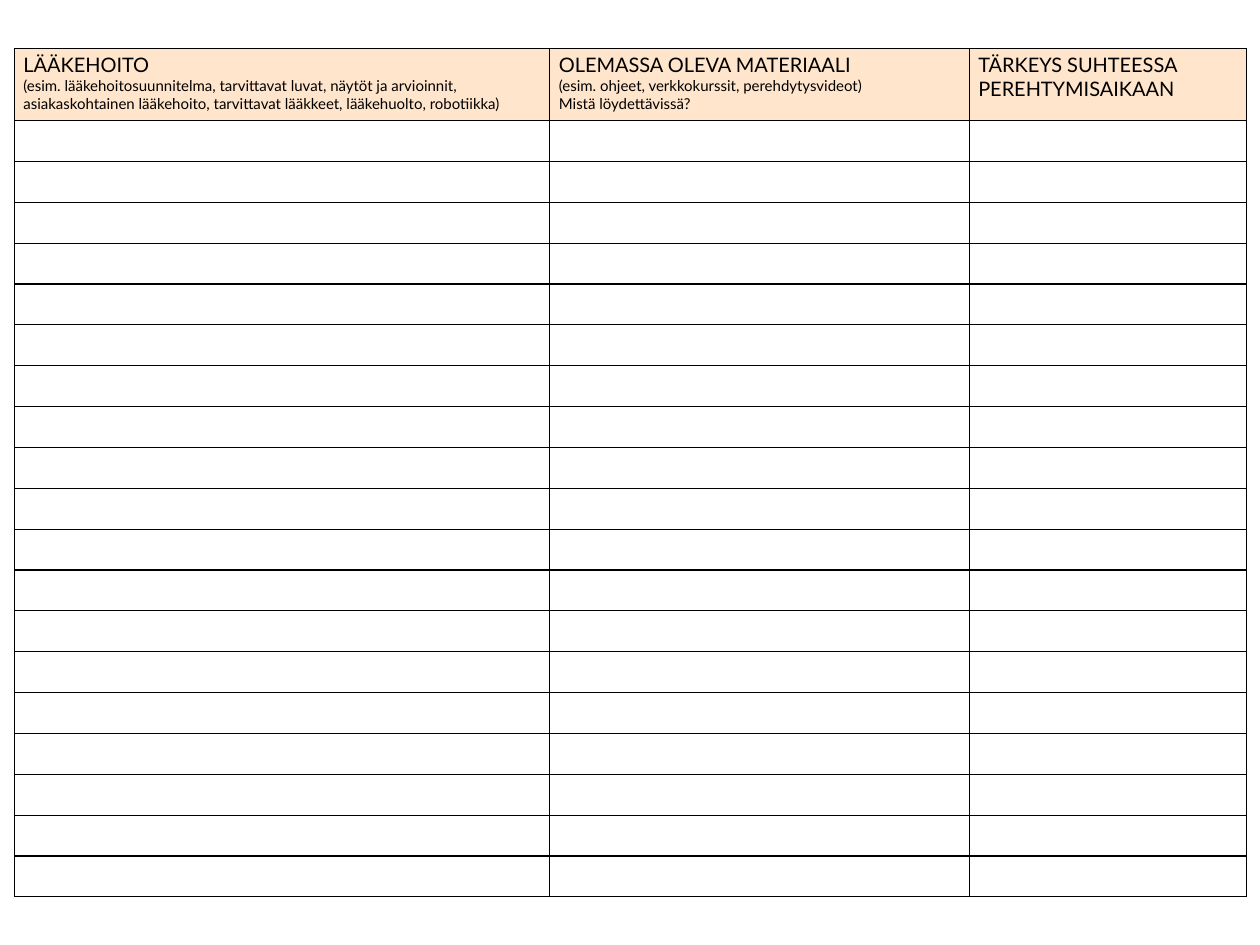
from lxml.etree import SubElement
from pptx import Presentation
from pptx.dml.color import RGBColor
from pptx.oxml.ns import qn
from pptx.util import Pt

PX = 9144  # EMU per px, 100 px to the inch
COLORS = {"ink": "000000", "head": "FFCC99"}
FONT = "Lato"
BIG, SMALL = 16, 12
LEFT, TOP = 16, 54
COLS = [595, 466, 308]
HEAD, BODY, ROWS = 80, 863, 19

# Each column holds paragraphs; each paragraph holds lines of (text, size).
TITLES = [
    [
        [("LÄÄKEHOITO", BIG)],
        [("(esim. lääkehoitosuunnitelma, tarvittavat luvat, näytöt ja arvioinnit, "
          "asiakaskohtainen lääkehoito, tarvittavat lääkkeet, lääkehuolto, "
          "robotiikka)", SMALL)],
    ],
    [
        [("OLEMASSA OLEVA MATERIAALI", BIG),
         ("(esim. ohjeet, verkkokurssit, perehdytysvideot)", SMALL)],
        [("Mistä löydettävissä?", SMALL)],
    ],
    [[("TÄRKEYS SUHTEESSA PEREHTYMISAIKAAN", BIG)]],
]


def px(n):
    return round(n * PX)


def frame(cell):
    """Draw a thin line on all four sides of the cell."""
    props = cell._tc.get_or_add_tcPr()
    for side in ("lnL", "lnR", "lnT", "lnB"):
        line = SubElement(props, qn("a:" + side), w=str(Pt(1)))
        fill = SubElement(line, qn("a:solidFill"))
        SubElement(fill, qn("a:srgbClr"), val=COLORS["ink"])


def tint(cell):
    """Fill the cell with the heading colour at half strength."""
    cell.fill.solid()
    cell.fill.fore_color.rgb = RGBColor.from_string(COLORS["head"])
    color = cell._tc.tcPr.find(qn("a:solidFill")).find(qn("a:srgbClr"))
    SubElement(color, qn("a:alpha"), val="50000")


def write(cell, paras):
    text = cell.text_frame
    for i, lines in enumerate(paras):
        para = text.add_paragraph() if i else text.paragraphs[0]
        for j, (words, size) in enumerate(lines):
            if j:
                para.add_line_break()
            run = para.add_run()
            run.text = words
            style = {"name": FONT, "size": Pt(size), "bold": False}
            for key, value in style.items():
                setattr(run.font, key, value)
            run.font.color.rgb = RGBColor.from_string(COLORS["ink"])


def add_grid(slide):
    table = slide.shapes.add_table(
        ROWS + 1, len(COLS), px(LEFT), px(TOP), px(sum(COLS)), px(HEAD + BODY)
    ).table
    table.first_row = table.horz_banding = False
    for col, width in zip(table.columns, COLS):
        col.width = px(width)
    for i, row in enumerate(table.rows):
        row.height = px(BODY / ROWS if i else HEAD)
        for cell in row.cells:
            frame(cell)
            if i:
                cell.fill.background()
            else:
                tint(cell)
    for cell, paras in zip(table.rows[0].cells, TITLES):
        write(cell, paras)


def main():
    deck = Presentation()
    deck.slide_width, deck.slide_height = px(1400), px(1050)
    slide = deck.slides.add_slide(deck.slide_layouts[6])
    add_grid(slide)
    deck.save("out.pptx")


if __name__ == "__main__":
    main()
